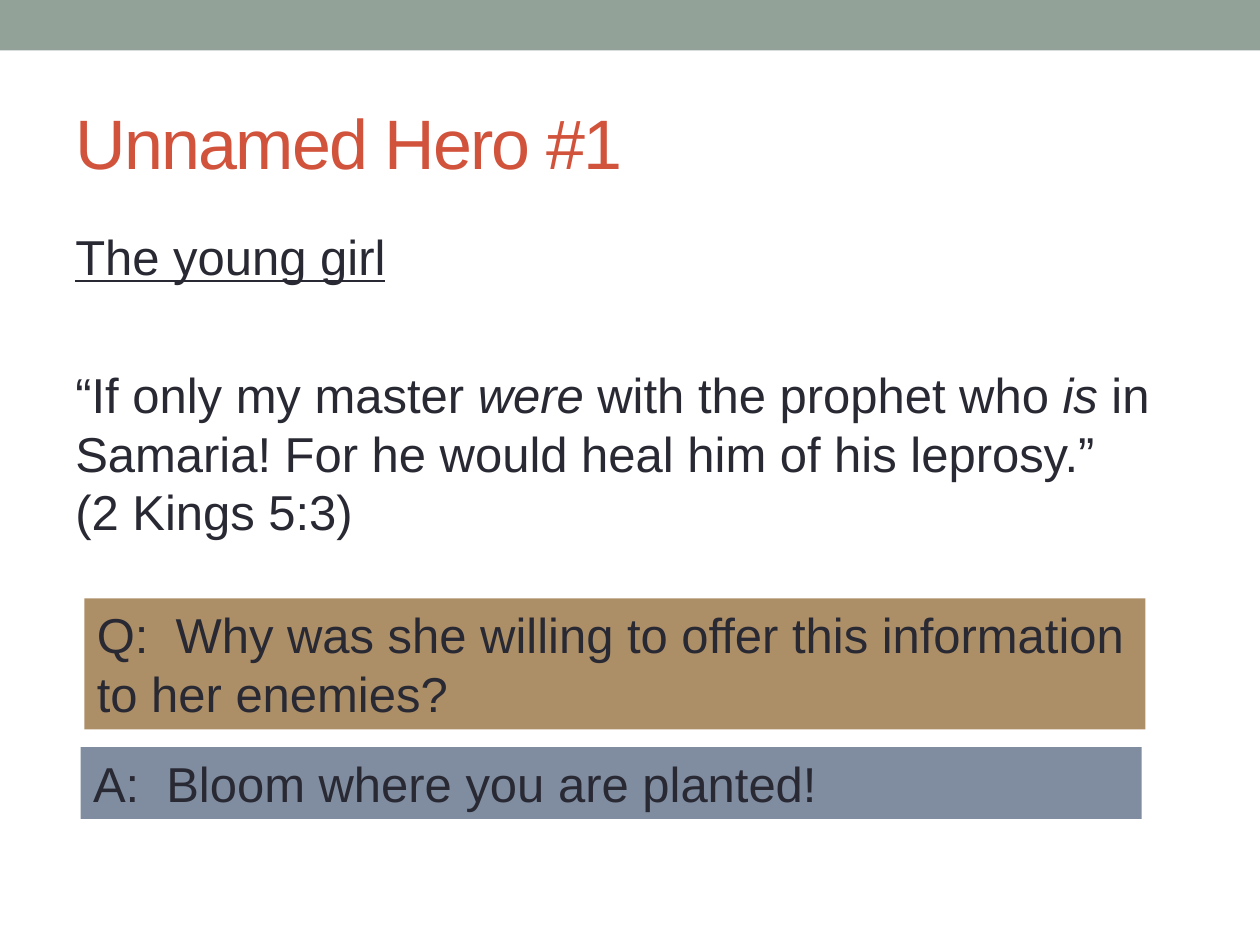
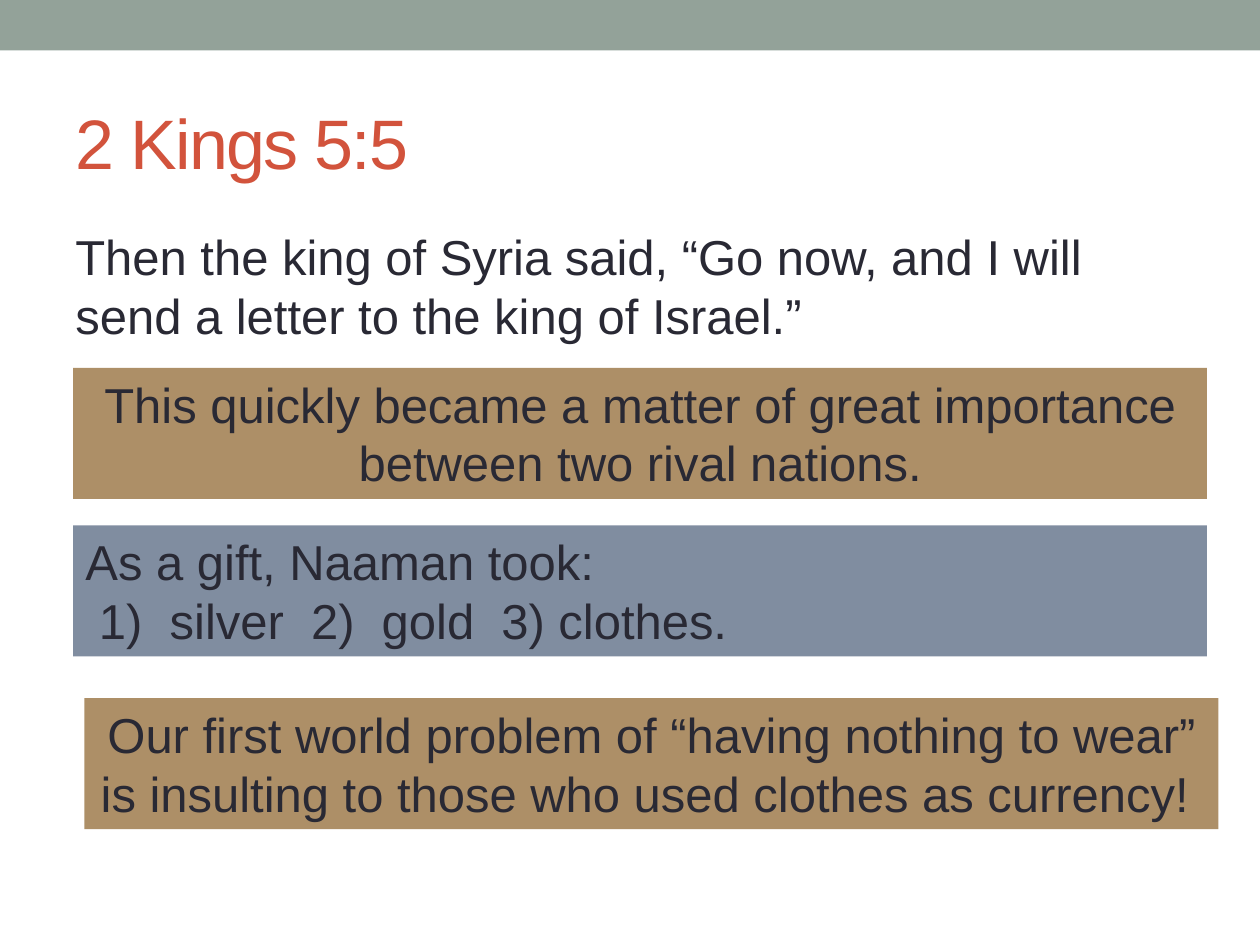
import pptx
import pptx.util
import pptx.dml.color
import pptx.enum.shapes
import pptx.enum.text

RGBColor = pptx.dml.color.RGBColor
Pt = pptx.util.Pt
PP_ALIGN = pptx.enum.text.PP_ALIGN
MSO_ANCHOR = pptx.enum.text.MSO_ANCHOR
RECTANGLE = pptx.enum.shapes.MSO_SHAPE.RECTANGLE

EMU_PER_PX = 9144  # 100 px to the inch
SAGE = RGBColor(0x93, 0xA2, 0x99)
RED = RGBColor(0xD2, 0x53, 0x3C)
INK = RGBColor(0x29, 0x29, 0x34)
TAN = RGBColor(0xAD, 0x8F, 0x67)
SLATE = RGBColor(0x80, 0x8D, 0xA0)

LEFT, CENTER = PP_ALIGN.LEFT, PP_ALIGN.CENTER
TITLE_FONT = {"name": "Arial", "size": Pt(40)}
TEXT_FONT = {"name": "Arial", "size": Pt(28)}
VERSE_GAP = Pt(45)


def px(*lengths):
    return [pptx.util.Emu(n * EMU_PER_PX) for n in lengths]


def write(tf, paragraphs, font, color, align=LEFT, anchor=MSO_ANCHOR.TOP, gap=0):
    """Fill a frame; a paragraph is a list of (text, extra font values) runs."""
    tf.word_wrap = True
    tf.auto_size = pptx.enum.text.MSO_AUTO_SIZE.NONE
    tf.vertical_anchor = anchor
    for i, runs in enumerate(paragraphs):
        p = tf.add_paragraph() if i else tf.paragraphs[0]
        p.alignment = align
        p.space_before = gap if i else 0
        for text, extra in runs:
            for n, line in enumerate(text.split("\n")):
                if n:
                    p.add_line_break()
                r = p.add_run()
                r.text = line
                r.font.color.rgb = color
                for key, value in {**font, **extra}.items():
                    setattr(r.font, key, value)


# Each panel: left, top, width, height, fill, alignment, lines
slides = [
    {
        "title": "Unnamed Hero #1",
        "body_height": 283,
        "body": [
            [("The young girl", {"underline": True})],
            [
                ("“If only my master ", {}),
                ("were", {"italic": True}),
                (" with the prophet who ", {}),
                ("is", {"italic": True}),
                (" in Samaria! For he would heal him of his leprosy.”\n(2 Kings 5:3)", {}),
            ],
        ],
        "panels": [
            (67, 475, 842, 104, TAN, LEFT,
             ["Q:  Why was she willing to offer this information to her enemies?"]),
            (64, 593, 842, 57, SLATE, LEFT, ["A:  Bloom where you are planted!"]),
        ],
    },
    {
        "title": "2 Kings 5:5",
        "body_height": 125,
        "body": [[("Then the king of Syria said, “Go now, and I will send a letter "
                   "to the king of Israel.”", {})]],
        "panels": [
            (58, 292, 900, 104, TAN, CENTER,
             ["This quickly became a matter of great importance between two rival nations."]),
            (58, 417, 900, 104, SLATE, LEFT,
             ["As a gift, Naaman took:", " 1)  silver  2)  gold  3) clothes."]),
            (67, 554, 900, 104, TAN, CENTER,
             ["Our first world problem of “having nothing to wear” is insulting "
              "to those who used clothes as currency! "]),
        ],
    },
]

prs = pptx.Presentation()
prs.slide_width, prs.slide_height = px(1000, 750)
title_only = prs.slide_layouts[5]

for content in slides:
    s = prs.slides.add_slide(title_only)

    band = s.shapes.add_shape(RECTANGLE, *px(0, 0, 1000, 40))
    band.shadow.inherit = False
    band.fill.solid()
    band.fill.fore_color.rgb = SAGE
    band.line.fill.background()
    s.shapes._spTree.insert(2, band._element)  # behind the title

    title = s.shapes.title
    title.left, title.top, title.width, title.height = px(50, 58, 900, 108)
    write(title.text_frame, [[(content["title"], {})]], TITLE_FONT, RED,
          anchor=MSO_ANCHOR.MIDDLE)
    for r in title.text_frame.paragraphs[0].runs:
        r._r.get_or_add_rPr().set("spc", "-100")

    body = s.shapes.add_textbox(*px(50, 175, 900, content["body_height"]))
    write(body.text_frame, content["body"], TEXT_FONT, INK, gap=VERSE_GAP)

    for left, top, width, height, fill, align, lines in content["panels"]:
        panel = s.shapes.add_shape(RECTANGLE, *px(left, top, width, height))
        panel.shadow.inherit = False
        panel.fill.solid()
        panel.fill.fore_color.rgb = fill
        panel.line.fill.background()
        write(panel.text_frame, [[(line, {})] for line in lines], TEXT_FONT, INK, align)

prs.save("out.pptx")
